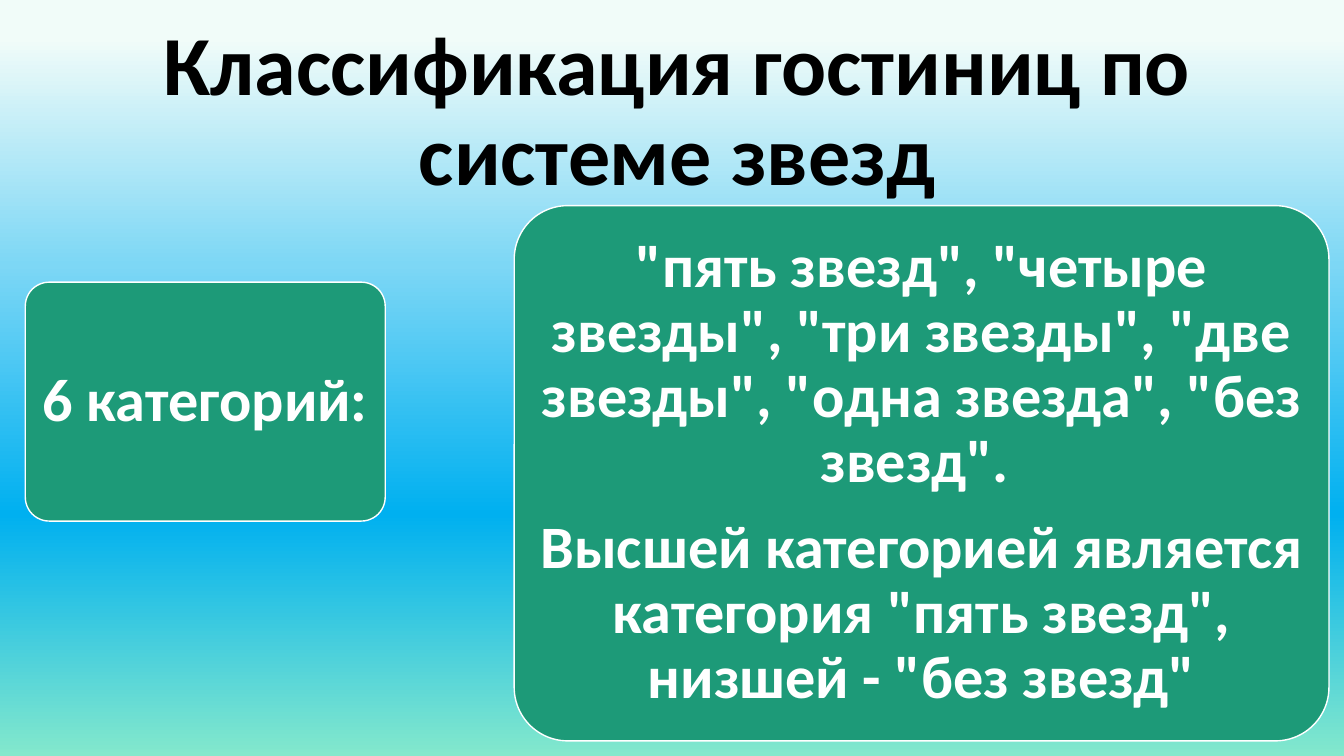
from copy import deepcopy
from dataclasses import dataclass
from typing import Any

from pptx import Presentation
from pptx.dml.color import RGBColor
from pptx.enum.shapes import MSO_SHAPE as Shape
from pptx.enum.text import MSO_ANCHOR as Anchor, MSO_AUTO_SIZE as AutoSize, PP_ALIGN as Align
from pptx.oxml.ns import qn
from pptx.slide import Slide
from pptx.text.text import TextFrame
from pptx.util import Inches, Pt

BLACK = RGBColor(0x00, 0x00, 0x00)
WHITE = RGBColor(0xFF, 0xFF, 0xFF)
GREEN = RGBColor(0x1D, 0x9A, 0x78)
SKY = (
    (5, RGBColor(0xF1, 0xFC, 0xF9)),
    (35, RGBColor(0x7D, 0xD7, 0xF5)),
    (68, RGBColor(0x00, 0xB0, 0xF0)),
    (100, RGBColor(0x83, 0xE8, 0xCC)),
)
WIDTH, HEIGHT = Inches(13.33), Inches(7.5)
COLUMN, ROW = WIDTH / 100, HEIGHT / 100

FRAME = {"word_wrap": True, "vertical_anchor": Anchor.MIDDLE, "auto_size": AutoSize.NONE}
CARD_FRAME = FRAME | {
    "margin_left": Inches(0.09), "margin_right": Inches(0.09),
    "margin_top": Inches(0.06), "margin_bottom": Inches(0.06),
}
TITLE_PARA = {"alignment": Align.CENTER, "line_spacing": 0.9}
CARD_PARA = TITLE_PARA | {"space_after": Pt(15)}
TITLE_FONT = {"name": "Calibri", "size": Pt(60), "bold": True}
CARD_FONT = TITLE_FONT | {"size": Pt(43)}


@dataclass(frozen=True)
class Area:
    """A rectangle in hundredths of the slide's width and height."""
    left: float
    top: float
    width: float
    height: float

    def place(self) -> dict[str, int]:
        """Give the rectangle as shape attributes."""
        return {
            "left": round(self.left * COLUMN), "top": round(self.top * ROW),
            "width": round(self.width * COLUMN), "height": round(self.height * ROW),
        }


@dataclass(frozen=True)
class Card:
    """A rounded green card with its paragraphs."""
    area: Area
    texts: tuple[str, ...]


TITLE = "Классификация гостиниц по системе звезд"
TITLE_AREA = Area(1.88, 5.33, 97, 19.33)
CARDS = (
    Card(Area(1.88, 37.33, 26.78, 31.6), ("6 категорий: ",)),
    Card(Area(38.26, 27.2, 60.62, 70.8), (
        '"пять звезд", "четыре звезды", "три звезды", "две звезды", "одна звезда", "без звезд". ',
        'Высшей категорией является категория "пять звезд", низшей - "без звезд"',
    )),
)


def apply(target: Any, values: dict[str, Any]) -> None:
    """Set every attribute named in the values."""
    for name, value in values.items():
        setattr(target, name, value)


def write(frame: TextFrame, texts: tuple[str, ...], para_format: dict[str, Any],
          font_format: dict[str, Any], color: RGBColor) -> None:
    """Write one formatted paragraph for each text."""
    for index, text in enumerate(texts):
        para = frame.add_paragraph() if index else frame.paragraphs[0]
        apply(para, para_format)
        span = para.add_run()
        span.text = text
        apply(span.font, font_format)
        span.font.color.rgb = color


def paint_background(page: Slide) -> None:
    """Fill the page with the vertical sky gradient."""
    fill = page.background.fill
    fill.gradient()
    fill.gradient_angle = 270
    stop_list = page.element.find(".//" + qn("a:gsLst"))
    while len(stop_list) < len(SKY):
        stop_list.append(deepcopy(stop_list[0]))
    for stop, (percent, color) in zip(fill.gradient_stops, SKY):
        stop.position = percent / 100
        stop.color.rgb = color


def add_title(page: Slide) -> None:
    """Place and format the title."""
    title = page.shapes.title
    apply(title, TITLE_AREA.place())
    apply(title.text_frame, FRAME)
    write(title.text_frame, (TITLE,), TITLE_PARA, TITLE_FONT, BLACK)


def add_card(page: Slide, card: Card) -> None:
    """Draw a card."""
    box = page.shapes.add_shape(Shape.ROUNDED_RECTANGLE, **card.area.place())
    box.adjustments[0] = 0.1
    box.shadow.inherit = False
    box.fill.solid()
    box.fill.fore_color.rgb = GREEN
    box.line.color.rgb = WHITE
    box.line.width = Pt(1)
    apply(box.text_frame, CARD_FRAME)
    write(box.text_frame, card.texts, CARD_PARA, CARD_FONT, WHITE)


def main() -> None:
    """Build and save the deck."""
    deck = Presentation()
    apply(deck, {"slide_width": WIDTH, "slide_height": HEIGHT})
    page = deck.slides.add_slide(deck.slide_layouts[5])
    paint_background(page)
    add_title(page)
    for card in CARDS:
        add_card(page, card)
    deck.save("out.pptx")


if __name__ == "__main__":
    main()
